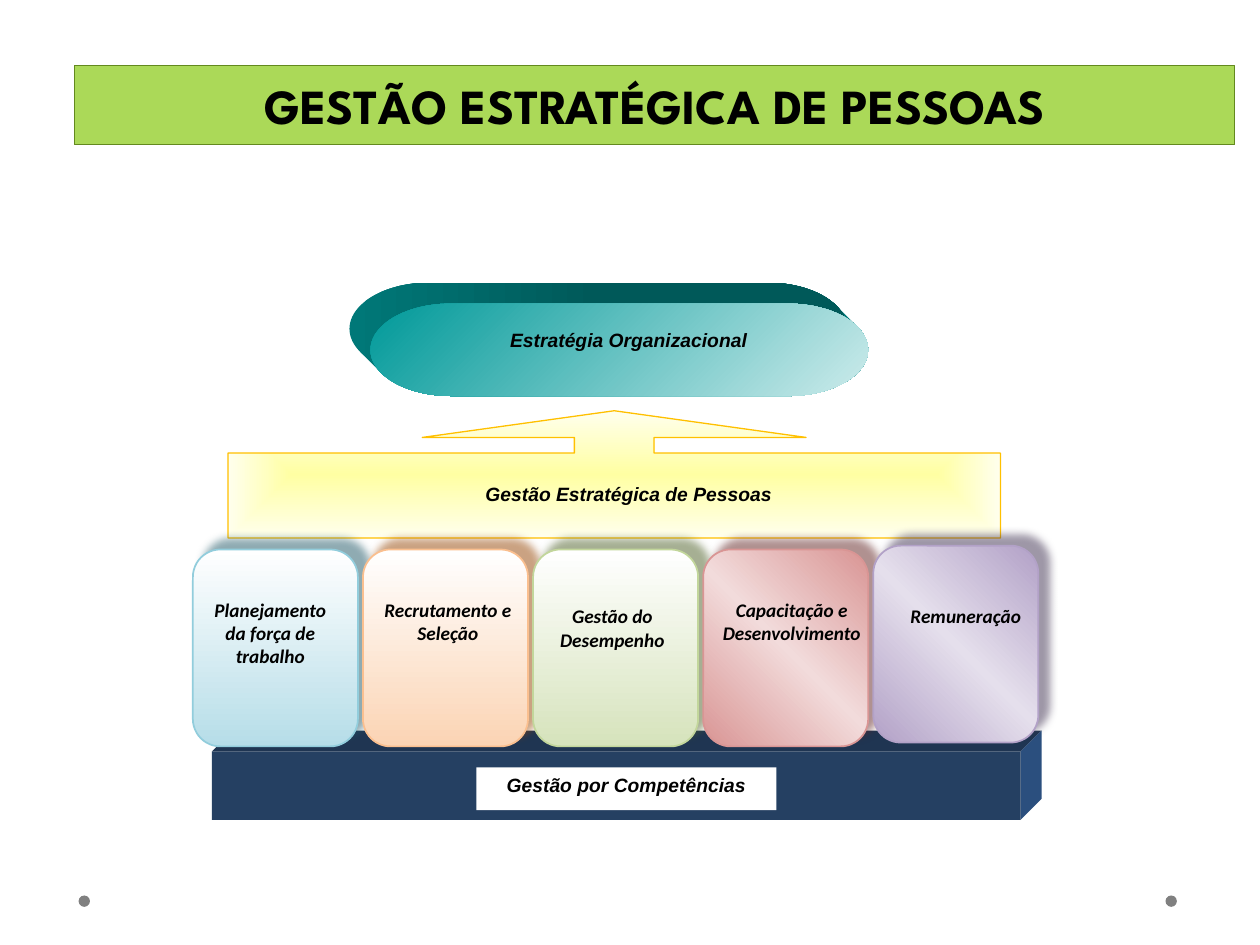
import math

import pptx
import pptx.dml.color
import pptx.enum.shapes
import pptx.enum.text
import pptx.oxml
import pptx.oxml.ns
import pptx.util

Pt = pptx.util.Pt
RGBColor = pptx.dml.color.RGBColor
SHAPES = pptx.enum.shapes.MSO_SHAPE
ANCHOR = pptx.enum.text.MSO_ANCHOR
CENTER = pptx.enum.text.PP_ALIGN.CENTER

BLACK = RGBColor(0x00, 0x00, 0x00)
WHITE = RGBColor(0xFF, 0xFF, 0xFF)
GRAY = RGBColor(0x80, 0x80, 0x80)
GREEN = RGBColor(0xAB, 0xD9, 0x58)
DARK_GREEN = RGBColor(0x63, 0x89, 0x1F)
GOLD = RGBColor(0xFF, 0xC0, 0x00)
YELLOW = RGBColor(0xFF, 0xFF, 0xA3)
PALE_YELLOW = RGBColor(0xFF, 0xFF, 0xED)
TEAL = RGBColor(0x00, 0x99, 0x99)
PALE_TEAL = RGBColor(0xCC, 0xEB, 0xEB)
DARK_TEAL = RGBColor(0x00, 0x59, 0x59)
MID_TEAL = RGBColor(0x00, 0x78, 0x78)
NAVY_FRONT = RGBColor(0x25, 0x40, 0x62)
NAVY_TOP = RGBColor(0x1F, 0x35, 0x52)
NAVY_SIDE = RGBColor(0x2B, 0x4F, 0x7E)
BLUE = RGBColor(0xB6, 0xDD, 0xE8)
BLUE_LINE = RGBColor(0x92, 0xCD, 0xDC)
BLUE_SHADOW = RGBColor(0x20, 0x58, 0x67)
ORANGE = RGBColor(0xFB, 0xD4, 0xB4)
ORANGE_LINE = RGBColor(0xFA, 0xBF, 0x8F)
ORANGE_SHADOW = RGBColor(0x97, 0x47, 0x06)
OLIVE = RGBColor(0xD6, 0xE3, 0xBC)
OLIVE_LINE = RGBColor(0xC2, 0xD6, 0x9B)
OLIVE_SHADOW = RGBColor(0x4E, 0x61, 0x28)
PINK = RGBColor(0xF2, 0xDB, 0xDB)
RED = RGBColor(0xD9, 0x95, 0x94)
RED_SHADOW = RGBColor(0x62, 0x24, 0x23)
LILAC = RGBColor(0xE5, 0xDF, 0xEC)
PURPLE = RGBColor(0xB2, 0xA1, 0xC7)
PURPLE_SHADOW = RGBColor(0x3F, 0x31, 0x51)

# Content
TITLE = "GESTÃO ESTRATÉGICA DE PESSOAS"
# text, label box, card top, gradient colours, angle, line, shadow
CARDS = [
    ("Planejamento da força de trabalho", (110.2, 338.4, 88.6, 53.3), 314,
     (WHITE, BLUE), 90, BLUE_LINE, BLUE_SHADOW),
    ("Recrutamento e Seleção", (211.7, 338.4, 88.6, 34.6), 314,
     (WHITE, ORANGE), 90, ORANGE_LINE, ORANGE_SHADOW),
    ("Gestão do Desempenho", (308.2, 342, 83.5, 53.3), 314,
     (WHITE, OLIVE), 90, OLIVE_LINE, OLIVE_SHADOW),
    ("Capacitação e Desenvolvimento", (401, 338.4, 103, 40.3), 314,
     (RED, PINK, RED), 315, RED, RED_SHADOW),
    ("Remuneração", (507.6, 342, 88.6, 31), 311.8,
     (PURPLE, LILAC, PURPLE), 315, PURPLE, PURPLE_SHADOW),
]
LEVELS = [
    ("Gestão Estratégica de Pessoas", (254.2, 272.2, 210.2, 24.5)),
    ("Estratégia Organizacional", (254.2, 184.3, 210.2, 24.5)),
]
COMPETENCES = ("Gestão por Competências", (272.2, 438.5, 171.4, 24.5))

# Geometry
DEPTH = 12
CARD_LEFT, CARD_PITCH, CARD_WIDTH, CARD_HEIGHT = 110.2, 97.2, 94.3, 112.5
BASE = (121, 429.5, 462.2, 39)
CALLOUT = (130.3, 234.7, 441.4, 72.7)
PILL = (211.7, 173.5, 284.4, 52.8)

presentation = pptx.Presentation()
presentation.slide_width = Pt(720)
presentation.slide_height = Pt(540)
slide = presentation.slides.add_slide(presentation.slide_layouts[5])


def paint(shape, color=None, line=None, width=1):
    shape.shadow.inherit = False
    if color is not None:
        shape.fill.solid()
        shape.fill.fore_color.rgb = color
    if line is None:
        shape.line.fill.background()
    else:
        shape.line.color.rgb = line
        shape.line.width = Pt(width)


def add_shape(kind, box, color=None, line=None, width=1):
    shape = slide.shapes.add_shape(kind, *map(Pt, box))
    paint(shape, color, line, width)
    return shape


def add_polygon(points, color):
    builder = slide.shapes.build_freeform(*map(Pt, points[0]))
    builder.add_line_segments([tuple(map(Pt, p)) for p in points[1:]], close=True)
    paint(builder.convert_to_shape(), color)


def set_gradient(shape, colors, angle=None):
    """Linear at an angle, or from the centre outwards without one."""
    step = 100000 // (len(colors) - 1)
    stops = "".join(f'<a:gs pos="{i * step}"><a:srgbClr val="{color}"/></a:gs>'
                    for i, color in enumerate(colors))
    if angle is None:
        course = ('<a:path path="rect"><a:fillToRect l="50000" t="50000" '
                  'r="50000" b="50000"/></a:path>')
    else:
        course = f'<a:lin ang="{angle * 60000}" scaled="0"/>'
    gradient = pptx.oxml.parse_xml(
        f'<a:gradFill {pptx.oxml.ns.nsdecls("a")} rotWithShape="1">'
        f'<a:gsLst>{stops}</a:gsLst>{course}</a:gradFill>')
    shape._element.spPr.find(pptx.oxml.ns.qn("a:prstGeom")).addnext(gradient)


def set_shadow(shape, color):
    effects = shape._element.spPr.find(pptx.oxml.ns.qn("a:effectLst"))
    effects.append(pptx.oxml.parse_xml(
        f'<a:outerShdw {pptx.oxml.ns.nsdecls("a")} blurRad="{Pt(5)}" '
        f'dist="{Pt(8.5)}" dir="{315 * 60000}" algn="ctr" rotWithShape="0">'
        f'<a:srgbClr val="{color}"><a:alpha val="50000"/></a:srgbClr>'
        '</a:outerShdw>'))


def write(shape, text, font_name, size=11, italic=True, anchor=ANCHOR.TOP):
    frame = shape.text_frame
    frame.text = text
    frame.word_wrap = True
    frame.vertical_anchor = anchor
    paragraph = frame.paragraphs[0]
    paragraph.alignment = CENTER
    font = paragraph.runs[0].font
    font.name, font.size, font.bold, font.italic = font_name, Pt(size), True, italic
    font.color.rgb = BLACK


def add_label(text, box, font_name):
    write(slide.shapes.add_textbox(*map(Pt, box)), text, font_name)


# Footer dots
for dot_left in (44.9, 666):
    add_shape(SHAPES.OVAL, (dot_left, 511.7, 6.5, 6.5), GRAY)

# Title bar
title = slide.shapes.title
title.left, title.top, title.width, title.height = map(Pt, (42.5, 37.4, 663.1, 45.4))
title._element.spPr.append(pptx.oxml.parse_xml(
    f'<a:prstGeom {pptx.oxml.ns.nsdecls("a")} prst="roundRect"><a:avLst/></a:prstGeom>'))
paint(title, GREEN, DARK_GREEN, 0.75)
write(title, TITLE, "League Spartan", 28, False, ANCHOR.MIDDLE)

# Base block, receding up and to the right
left, top, width, height = BASE
right, bottom = left + width, top + height
add_polygon([(left, top), (left + DEPTH, top - DEPTH),
             (right + DEPTH, top - DEPTH), (right, top)], NAVY_TOP)
add_polygon([(right, top), (right + DEPTH, top - DEPTH),
             (right + DEPTH, bottom - DEPTH), (right, bottom)], NAVY_SIDE)
add_shape(SHAPES.RECTANGLE, BASE, NAVY_FRONT)
text, box = COMPETENCES
write(add_shape(SHAPES.RECTANGLE, box, WHITE), text, "Arial")

# Arrow callout
callout = add_shape(SHAPES.UP_ARROW_CALLOUT, CALLOUT, line=GOLD, width=0.75)
for i, value in enumerate((0.626, 1.508, 0.21, 0.667)):
    callout.adjustments[i] = value
set_gradient(callout, (YELLOW, PALE_YELLOW))

# Strategy pill, receding up and to the left; the band joins its tangent points
left, top, width, height = PILL
radius_x, radius_y = width * 3475 / 21600, height / 2
reach = math.hypot(radius_x, radius_y)
shift_x, shift_y = radius_x ** 2 / reach, radius_y ** 2 / reach
upper = (left + width - radius_x + shift_x, top + radius_y - shift_y)
lower = (left + radius_x - shift_x, top + radius_y + shift_y)
back_upper, back_lower = [(x - DEPTH, y - DEPTH) for x, y in (upper, lower)]
add_polygon([back_upper, upper, lower, back_lower], MID_TEAL)
back = add_shape(SHAPES.FLOWCHART_TERMINATOR, (left - DEPTH, top - DEPTH, width, height))
set_gradient(back, (MID_TEAL, DARK_TEAL, DARK_TEAL), 0)
set_gradient(add_shape(SHAPES.FLOWCHART_TERMINATOR, PILL), (TEAL, PALE_TEAL), 45)

# Cards
for i, (text, box, card_top, colors, angle, line, shadow) in enumerate(CARDS):
    card = add_shape(SHAPES.ROUNDED_RECTANGLE,
                     (CARD_LEFT + i * CARD_PITCH, card_top, CARD_WIDTH, CARD_HEIGHT),
                     line=line)
    set_gradient(card, colors, angle)
    set_shadow(card, shadow)
    add_label(text, box, "Calibri")

# Level labels
for text, box in LEVELS:
    add_label(text, box, "Arial")

presentation.save("out.pptx")
